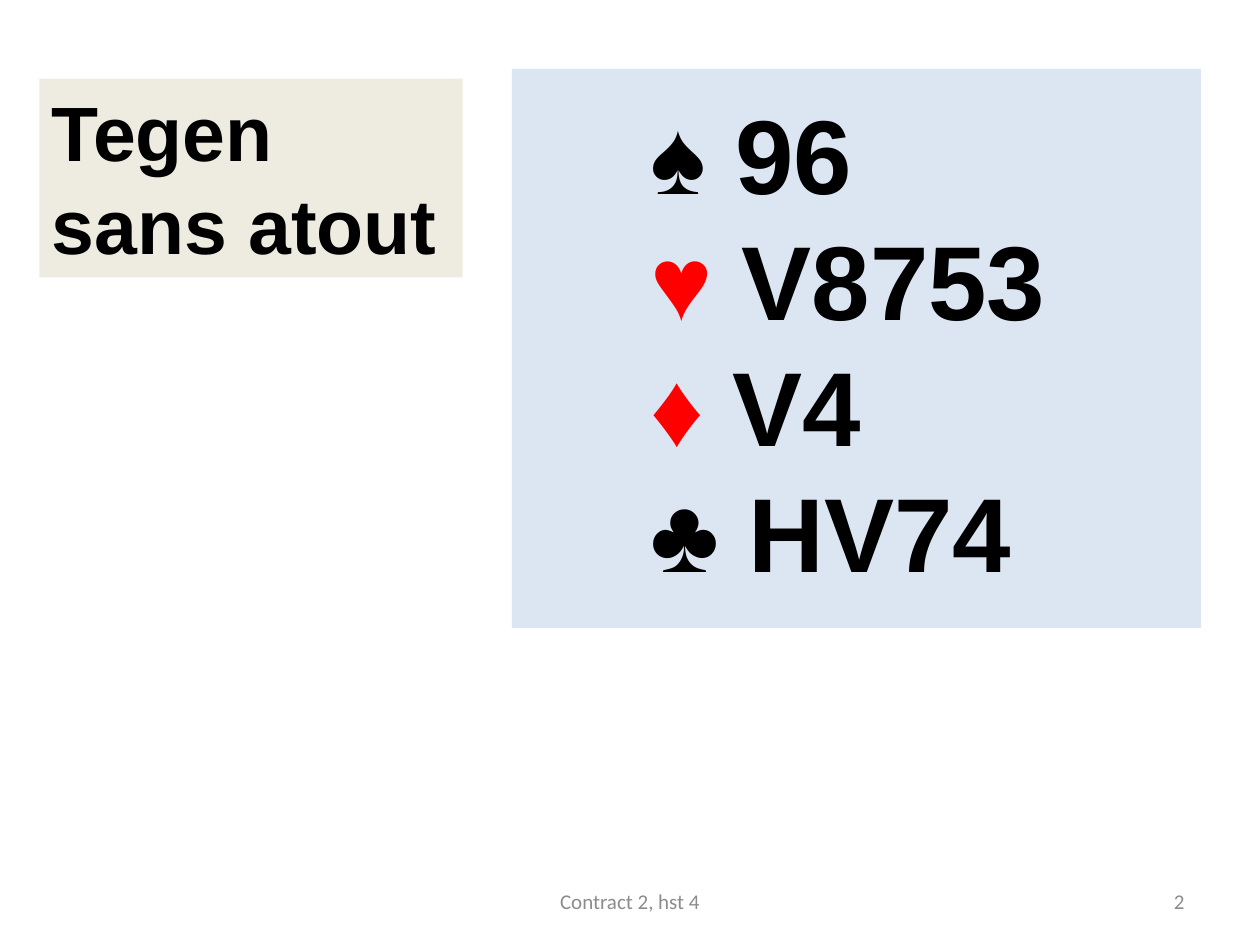
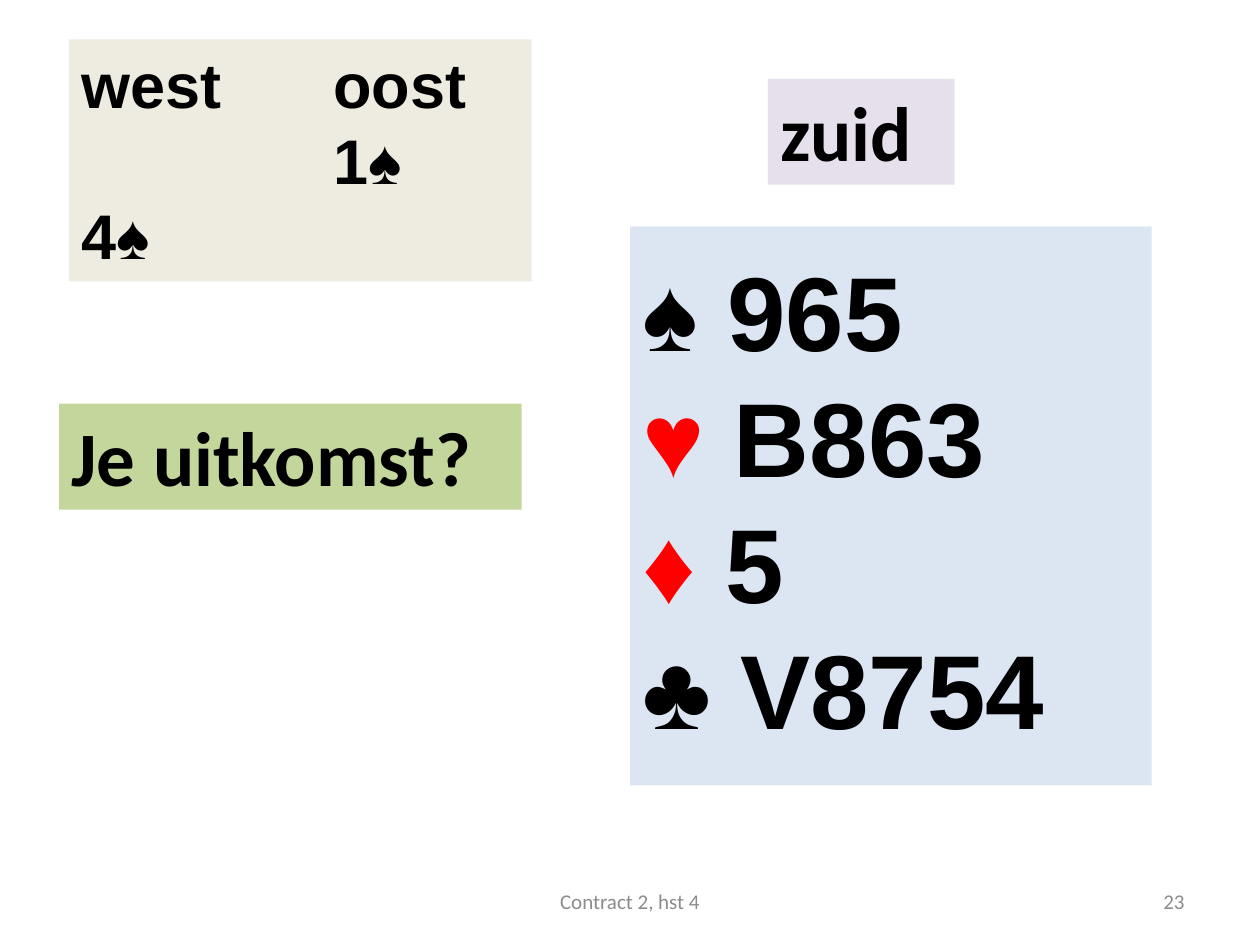
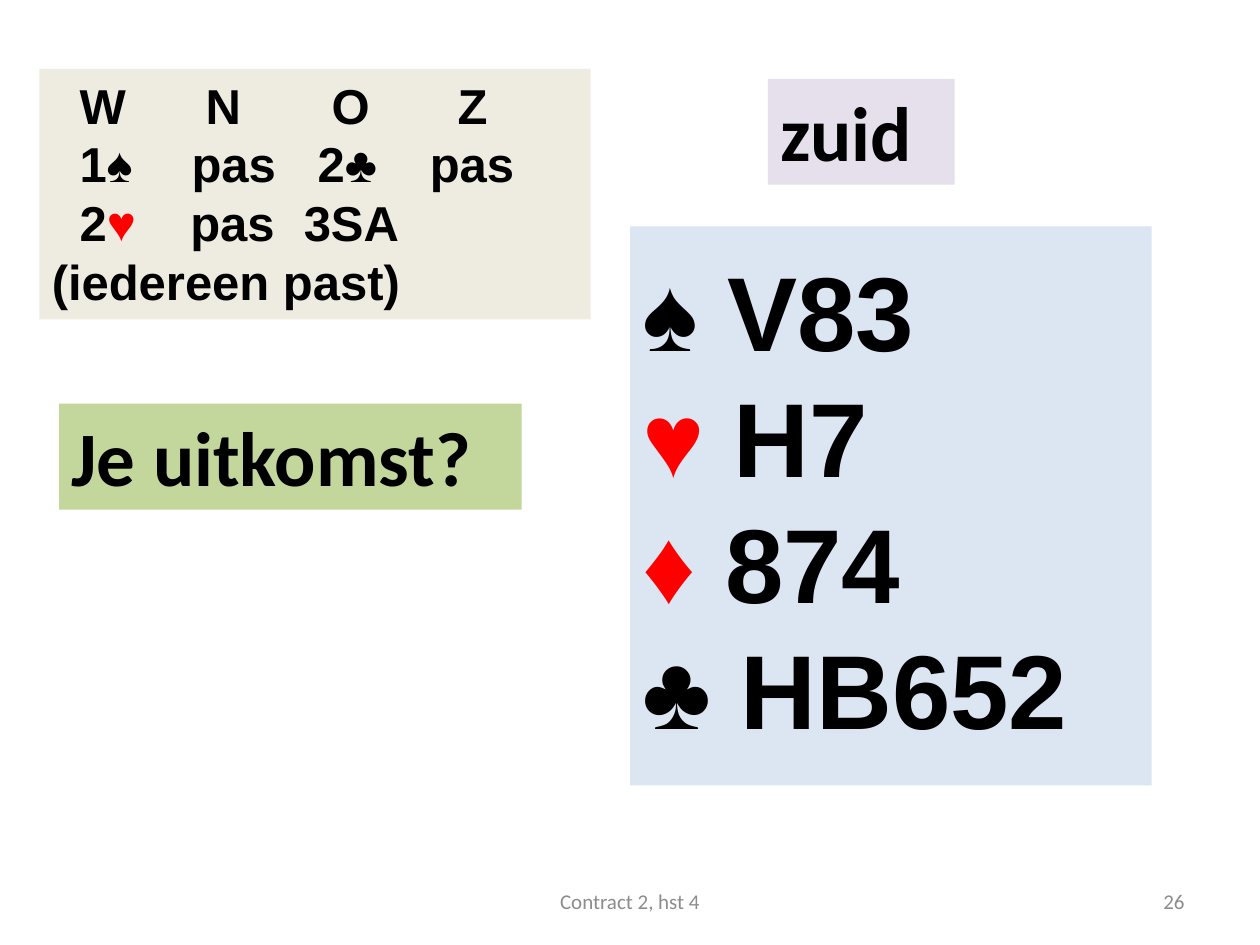
from itertools import groupby

from lxml.etree import SubElement
from pptx import Presentation
from pptx.dml.color import RGBColor
from pptx.enum.shapes import MSO_SHAPE
from pptx.enum.text import MSO_ANCHOR, MSO_AUTO_SIZE, PP_ALIGN
from pptx.oxml.ns import qn
from pptx.util import Inches, Pt

SLIDE_WIDTH, SLIDE_HEIGHT = Inches(10), Inches(7.5)
COLUMNS, ROWS = 128, 96

BLACK = RGBColor(0x00, 0x00, 0x00)
RED = RGBColor(0xFF, 0x00, 0x00)
GREY = RGBColor(0x8C, 0x8C, 0x8C)
HAND_BLUE = RGBColor(0xDC, 0xE6, 0xF2)
BIDDING_BEIGE = RGBColor(0xEE, 0xEC, 0xE1)
QUESTION_GREEN = RGBColor(0xC3, 0xD6, 0x9B)
SEAT_LILAC = RGBColor(0xE6, 0xE0, 0xEC)

SUITS = "♠♥♦♣"
RED_SUITS = "♥♦"
FOOTER = "Contract 2, hst 4"


def grid_area(column, row, width, height):
    """Turn grid columns and rows into left, top, width and height."""
    across, down = SLIDE_WIDTH / COLUMNS, SLIDE_HEIGHT / ROWS
    return (round(column * across), round(row * down),
            round(width * across), round(height * down))


def add_run(paragraph, text, size, font, color, bold):
    run = paragraph.add_run()
    run.text = text
    run.font.size = Pt(size)
    run.font.name = font
    run.font.bold = bold
    run.font.color.rgb = color


def add_card_text(paragraph, text, size, font):
    """Write bold black text with hearts and diamonds in red."""
    for is_red, letters in groupby(text, lambda letter: letter in RED_SUITS):
        add_run(paragraph, "".join(letters), size, font,
                RED if is_red else BLACK, True)


def set_tab_stops(paragraph, stops):
    tab_list = SubElement(paragraph._p.get_or_add_pPr(), qn("a:tabLst"))
    for stop in stops:
        SubElement(tab_list, qn("a:tab"), pos=str(Inches(stop)), algn="l")


def add_panel(slide, area, fill, lines, size=44, font="Arial"):
    """Add a filled box with one paragraph for each line of card text."""
    panel = slide.shapes.add_shape(MSO_SHAPE.RECTANGLE, *grid_area(*area))
    panel.shadow.inherit = False
    panel.fill.solid()
    panel.fill.fore_color.rgb = fill
    panel.line.fill.background()
    frame = panel.text_frame
    frame.word_wrap = True
    frame.auto_size = MSO_AUTO_SIZE.SHAPE_TO_FIT_TEXT
    frame.vertical_anchor = MSO_ANCHOR.TOP
    for index, line in enumerate(lines):
        paragraph = frame.add_paragraph() if index else frame.paragraphs[0]
        paragraph.alignment = PP_ALIGN.LEFT
        add_card_text(paragraph, line, size, font)
    return frame


def add_hand(slide, area, holdings, indent=0):
    lines = [f"{suit} {cards}" for suit, cards in zip(SUITS, holdings)]
    frame = add_panel(slide, area, HAND_BLUE, lines, size=60)
    frame.margin_top, frame.margin_bottom = Inches(0.16), Inches(0.24)
    for paragraph in frame.paragraphs:
        properties = paragraph._p.get_or_add_pPr()
        properties.set("marL", str(Inches(indent)))
        properties.set("indent", "0")


def add_bidding(slide, area, size, rounds):
    """Add the bidding; each round is its text and its tab stops in inches."""
    frame = add_panel(slide, area, BIDDING_BEIGE,
                      [text for text, _ in rounds], size)
    for paragraph, (_, stops) in zip(frame.paragraphs, rounds):
        set_tab_stops(paragraph, stops)


def add_footer_text(slide, column, width, text, alignment):
    box = slide.shapes.add_textbox(*grid_area(column, 89, width, 5.11))
    frame = box.text_frame
    frame.word_wrap = True
    frame.vertical_anchor = MSO_ANCHOR.MIDDLE
    paragraph = frame.paragraphs[0]
    paragraph.alignment = alignment
    add_run(paragraph, text, 12, "Calibri", GREY, False)


def add_numbered_slide(deck, number):
    slide = deck.slides.add_slide(deck.slide_layouts[6])
    add_footer_text(slide, 91.73, 29.87, str(number), PP_ALIGN.RIGHT)
    add_footer_text(slide, 43.73, 40.53, FOOTER, PP_ALIGN.CENTER)
    return slide


def add_lead_question(deck, number, holdings, bidding_area, size, rounds):
    """Add a slide that asks south for a lead after the bidding."""
    slide = add_numbered_slide(deck, number)
    add_hand(slide, (64, 23, 53, 56.8), holdings)
    add_bidding(slide, bidding_area, size, rounds)
    add_panel(slide, (6, 41, 47, 10.77), QUESTION_GREEN,
              ["Je uitkomst?"], font="Calibri")
    add_panel(slide, (78, 8, 19, 10.77), SEAT_LILAC,
              ["zuid"], font="Calibri")


def main():
    deck = Presentation()
    deck.slide_width, deck.slide_height = SLIDE_WIDTH, SLIDE_HEIGHT

    no_trump = add_numbered_slide(deck, 2)
    add_hand(no_trump, (52, 7, 70, 56.8),
             ["96", "V8753", "V4", "HV74"], indent=1)
    add_panel(no_trump, (4, 8, 43, 20.2), BIDDING_BEIGE, ["Tegen sans atout"])

    add_lead_question(
        deck, 23, ["965", "B863", "5", "V8754"], (7, 4, 47, 24.6), 36,
        [("west\toost", [2]), ("\t1♠", [2]), ("4♠", [])])

    add_lead_question(
        deck, 26, ["V83", "H7", "874", "HB652"], (4, 7, 56, 25.45), 28,
        [("\tW\tN\tO\tZ", [0.22, 1.22, 2.22, 3.22]),
         ("\t1♠\tpas\t2♣\tpas", [0.22, 1.11, 2.11, 3]),
         ("\t2♥\tpas\t3SA", [0.22, 1.1, 2]),
         ("(iedereen past)", [])])

    deck.save("out.pptx")


if __name__ == "__main__":
    main()
